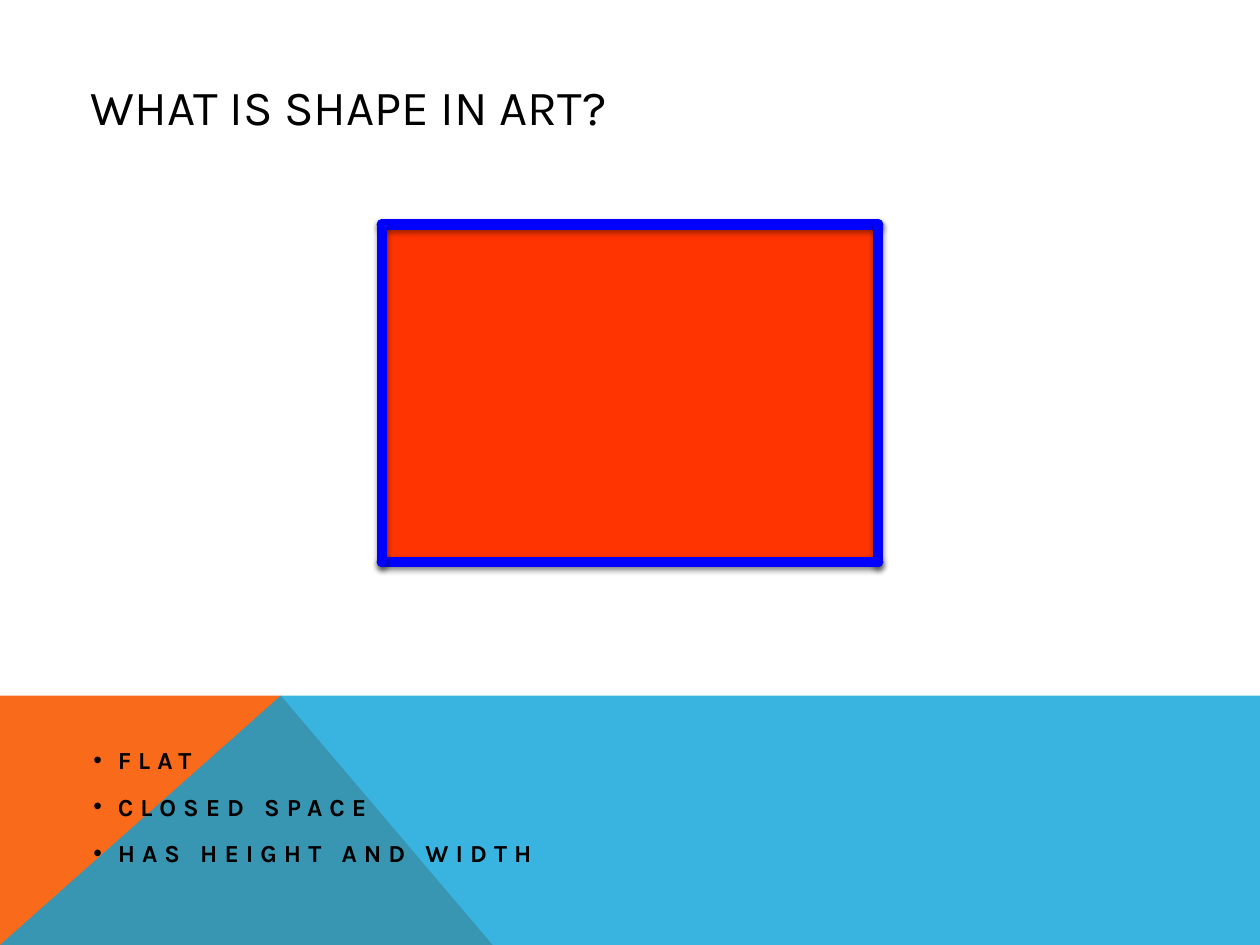
from lxml.etree import SubElement
from pptx import Presentation
from pptx.dml.color import RGBColor
from pptx.enum.shapes import MSO_CONNECTOR, MSO_SHAPE
from pptx.enum.text import MSO_ANCHOR, MSO_AUTO_SIZE, PP_ALIGN
from pptx.oxml.ns import qn
from pptx.util import Pt

COLORS = {
    "background": "FFFFFF",
    "orange": "F96A1B",
    "blue": "08A1D9",
    "rectangle": "FF3400",
    "border": "0000FF",
    "text": "000000",
    "shadow": "000000",
}
SLIDE_WIDTH, SLIDE_HEIGHT = 720, 540
BAND_TOP, BAND_PEAK, ORANGE_RIGHT = 397.5, 160.5, 281.5
LEFT, TOP, RIGHT, BOTTOM = 218.2, 128.2, 501.8, 321.1
FACTS = ["FLAT", "CLOSED SPACE", "HAS HEIGHT AND WIDTH"]


def color(name):
    return RGBColor.from_string(COLORS[name])


def apply_format(target, values):
    for name, value in values.items():
        setattr(target, name, value)


def add_shadow(shape, opacity, distance):
    effects = SubElement(shape.element.spPr, qn("a:effectLst"))
    shadow = SubElement(effects, qn("a:outerShdw"), {
        "blurRad": str(Pt(3.1)), "dist": str(Pt(distance)),
        "dir": "5400000", "rotWithShape": "0",
    })
    shade = SubElement(shadow, qn("a:srgbClr"), val=COLORS["shadow"])
    SubElement(shade, qn("a:alpha"), val=str(opacity * 1000))


def fill_shape(shape, color_name):
    shape.fill.solid()
    shape.fill.fore_color.rgb = color(color_name)
    shape.line.fill.background()


def add_band(slide, points, color_name, opacity=100):
    corners = [(Pt(x), Pt(y)) for x, y in points]
    builder = slide.shapes.build_freeform(*corners[0])
    builder.add_line_segments(corners[1:], close=True)
    band = builder.convert_to_shape()
    band.shadow.inherit = False
    fill_shape(band, color_name)
    if opacity < 100:
        shade = band.element.spPr.find(qn("a:solidFill"))[0]
        SubElement(shade, qn("a:alpha"), val=str(opacity * 1000))


def add_rectangle(slide):
    rectangle = slide.shapes.add_shape(
        MSO_SHAPE.RECTANGLE, Pt(LEFT), Pt(TOP), Pt(RIGHT - LEFT), Pt(BOTTOM - TOP))
    fill_shape(rectangle, "rectangle")
    add_shadow(rectangle, 35, 1.8)


def add_border_line(slide, start, end):
    line = slide.shapes.add_connector(
        MSO_CONNECTOR.STRAIGHT, *(Pt(value) for value in start + end))
    line.line.color.rgb = color("border")
    line.line.width = Pt(6)
    line.element.spPr.find(qn("a:ln")).set("cap", "rnd")
    add_shadow(line, 38, 1.6)


def place_placeholder(placeholder, box, frame_format):
    names = ("left", "top", "width", "height")
    apply_format(placeholder, {name: Pt(value) for name, value in zip(names, box)})
    apply_format(placeholder.text_frame, {
        "word_wrap": True, "auto_size": MSO_AUTO_SIZE.NONE, **frame_format})
    placeholder.element.getparent().append(placeholder.element)


def write_paragraph(paragraph, text, font_format, paragraph_format):
    apply_format(paragraph, {"alignment": PP_ALIGN.LEFT, **paragraph_format})
    run = paragraph.add_run()
    run.text = text
    apply_format(run.font, {"name": "Karla", **font_format})
    run.font.color.rgb = color("text")
    return run


def write_title(title):
    place_placeholder(title, (44.6, 20.9, 542.2, 79.2),
                      {"vertical_anchor": MSO_ANCHOR.MIDDLE})
    write_paragraph(title.text_frame.paragraphs[0], "WHAT IS SHAPE IN ART?",
                    {"size": Pt(28)}, {})


def write_facts(body):
    place_placeholder(body, (46.1, 394.6, 281.5, 111.6),
                      {"vertical_anchor": MSO_ANCHOR.TOP, "margin_top": Pt(29.6)})
    for index, fact in enumerate(FACTS):
        frame = body.text_frame
        paragraph = frame.add_paragraph() if index else frame.paragraphs[0]
        run = write_paragraph(
            paragraph, fact, {"size": Pt(14), "bold": True},
            {"line_spacing": 1.1, "space_before": Pt(8)})
        run.font.color.rgb = color("text")
        run.font.element.set("spc", "400") if hasattr(run.font, "element") else \
            run.text and paragraph.runs[0]._r.get_or_add_rPr().set("spc", "400")
        properties = paragraph._p.get_or_add_pPr()
        properties.set("marL", str(Pt(14)))
        properties.set("indent", str(-Pt(14)))
        SubElement(properties, qn("a:buChar"), char="•")


def main():
    presentation = Presentation()
    apply_format(presentation, {
        "slide_width": Pt(SLIDE_WIDTH), "slide_height": Pt(SLIDE_HEIGHT)})
    slide = presentation.slides.add_slide(presentation.slide_layouts[1])
    slide.background.fill.solid()
    slide.background.fill.fore_color.rgb = color("background")

    bottom_left, peak = (0, SLIDE_HEIGHT), (BAND_PEAK, BAND_TOP)
    add_band(slide, [bottom_left, (0, BAND_TOP), peak,
                     (ORANGE_RIGHT, SLIDE_HEIGHT)], "orange")
    add_band(slide, [bottom_left, peak, (SLIDE_WIDTH, BAND_TOP),
                     (SLIDE_WIDTH, SLIDE_HEIGHT)], "blue", 80)
    add_rectangle(slide)
    write_title(slide.shapes.title)
    write_facts(slide.placeholders[1])

    corners = [(LEFT, TOP), (RIGHT, TOP), (RIGHT, BOTTOM), (LEFT, BOTTOM)]
    for start, end in zip(corners, corners[1:] + corners[:1]):
        add_border_line(slide, start, end)
    presentation.save("out.pptx")


if __name__ == "__main__":
    main()
